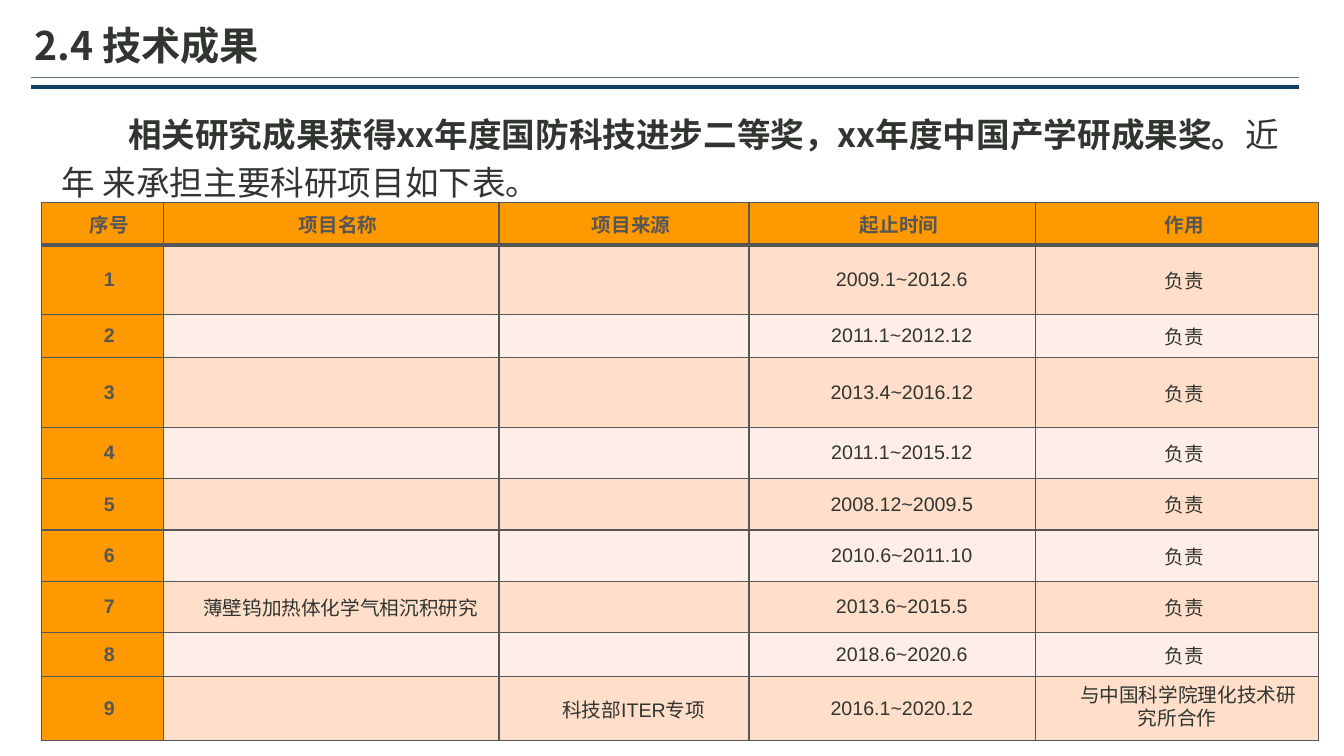
"""Build the slide of technical results with its table of research projects."""
from lxml.etree import SubElement
from pptx import Presentation
from pptx.dml.color import RGBColor
from pptx.enum.shapes import MSO_CONNECTOR as LINE
from pptx.enum.text import MSO_ANCHOR as ANCHOR, PP_ALIGN as ALIGN
from pptx.oxml import parse_xml
from pptx.oxml.ns import nsdecls, qn
from pptx.util import Inches, Pt

TITLE = "2.4 技术成果"
AWARD = "相关研究成果获得xx年度国防科技进步二等奖，xx年度中国产学研成果奖。"
INTRO = "近年 来承担主要科研项目如下表。"
HEADS = ["序号", "项目名称", "项目来源", "起止时间", "作用"]
LEAD = "负责"
PARTNER = "与中国科学院理化技术研\n究所合作"
PROJECTS = [
    ("", "", "2009.1~2012.6", LEAD),
    ("", "", "2011.1~2012.12", LEAD),
    ("", "", "2013.4~2016.12", LEAD),
    ("", "", "2011.1~2015.12", LEAD),
    ("", "", "2008.12~2009.5", LEAD),
    ("", "", "2010.6~2011.10", LEAD),
    ("薄壁钨加热体化学气相沉积研究", "", "2013.6~2015.5", LEAD),
    ("", "", "2018.6~2020.6", LEAD),
    ("", "科技部ITER专项", "2016.1~2020.12", PARTNER),
]
WIDTHS = [1.21, 3.33, 2.48, 2.84, 2.81]
HEIGHTS = [0.42, 0.69, 0.43, 0.69, 0.51, 0.51, 0.51, 0.51, 0.43, 0.64]

HAN, LATIN = "Noto Sans CJK SC", "Arial"
DARK = RGBColor(0x30, 0x35, 0x2F)
GRAY = RGBColor(0x56, 0x56, 0x56)
ORANGE = RGBColor(0xFF, 0x99, 0x00)
PEACH = RGBColor(0xFF, 0xDE, 0xCA)
PALE = RGBColor(0xFF, 0xEE, 0xE7)
STEEL = RGBColor(0x53, 0x72, 0x85)
NAVY = RGBColor(0x12, 0x40, 0x62)
RULES = [(0.77, STEEL, 1), (0.86, NAVY, 3)]


def style(run, size, color, bold, latin=HAN):
    font = run.font
    font.size, font.bold, font.name = Pt(size), bold, latin
    font.color.rgb = color
    SubElement(run._r.get_or_add_rPr(), qn("a:ea")).set("typeface", HAN)


def indent(para, left, first=0):
    props = para._p.get_or_add_pPr()
    props.set("marL", str(Inches(left)))
    props.set("indent", str(Inches(first)))


def add_box(slide, left, top, width, height, anchor):
    box = slide.shapes.add_textbox(*map(Inches, (left, top, width, height)))
    frame = box.text_frame
    frame.word_wrap, frame.vertical_anchor = True, anchor
    frame.margin_left = frame.margin_right = 0
    frame.margin_top = frame.margin_bottom = 0
    return frame.paragraphs[0]


def add_rule(slide, top, color, width):
    rule = slide.shapes.add_connector(
        LINE.STRAIGHT, Inches(0.31), Inches(top), Inches(12.88), Inches(top))
    rule.line.color.rgb, rule.line.width = color, Pt(width)
    SubElement(rule._element.spPr, qn("a:effectLst"))


def set_edges(cell, row):
    props = cell._tc.get_or_add_tcPr()
    thick = {(0, "B"), (1, "T")}
    for place, side in enumerate("LRTB"):
        width = Pt(3 if (row, side) in thick else 1)
        props.insert(place, parse_xml(
            f'<a:ln{side} {nsdecls("a")} w="{width}"><a:solidFill>'
            f'<a:srgbClr val="{GRAY}"/></a:solidFill></a:ln{side}>'))


def fill_cell(cell, text, row, col):
    key = row == 0 or col == 0
    cell.fill.solid()
    cell.fill.fore_color.rgb = ORANGE if key else PEACH if row % 2 else PALE
    set_edges(cell, row)
    cell.margin_left = cell.margin_right = 0
    cell.margin_top = cell.margin_bottom = 0
    cell.vertical_anchor = ANCHOR.MIDDLE
    cell.text_frame.text = text
    lines = cell.text_frame.paragraphs
    for place, para in enumerate(lines):
        para.alignment = ALIGN.CENTER
        indent(para, 0 if place else 0.14 if key or col == 4 else 0.19)
        if len(lines) > 1:
            para.line_spacing = Pt(16.4)
            indent(para, 0 if place else 0.22)
        for run in para.runs:
            latin = HAN if row == 0 else LATIN
            style(run, 14, GRAY if key else DARK, key, latin)


def add_grid(slide):
    rows = [HEADS] + [(str(n), *item) for n, item in enumerate(PROJECTS, 1)]
    table = slide.shapes.add_table(
        len(rows), len(HEADS), Inches(0.41), Inches(2.01),
        Inches(sum(WIDTHS)), Inches(sum(HEIGHTS))).table
    table.first_row = table.horz_banding = False
    for col, width in zip(table.columns, WIDTHS):
        col.width = Inches(width)
    for row, height in zip(table.rows, HEIGHTS):
        row.height = Inches(height)
    for r, texts in enumerate(rows):
        for c, text in enumerate(texts):
            fill_cell(table.cell(r, c), text, r, c)


def main():
    deck = Presentation()
    deck.slide_width, deck.slide_height = Inches(13.33), Inches(7.5)
    slide = deck.slides.add_slide(deck.slide_layouts[6])
    for rule in RULES:
        add_rule(slide, *rule)

    title = add_box(slide, 0.33, 0.13, 12.01, 0.63, ANCHOR.MIDDLE)
    title.text = TITLE
    title.line_spacing = Pt(33.5)
    indent(title, 0.01)
    style(title.runs[0], 28, DARK, True)

    body = add_box(slide, 0.6, 1.05, 12.41, 0.93, ANCHOR.TOP)
    body.line_spacing = 1.2
    indent(body, 0.01, 0.66)
    for text, bold in ((AWARD, True), (INTRO, False)):
        run = body.add_run()
        run.text = text
        style(run, 24, DARK, bold)

    add_grid(slide)
    deck.save("out.pptx")


if __name__ == "__main__":
    main()
